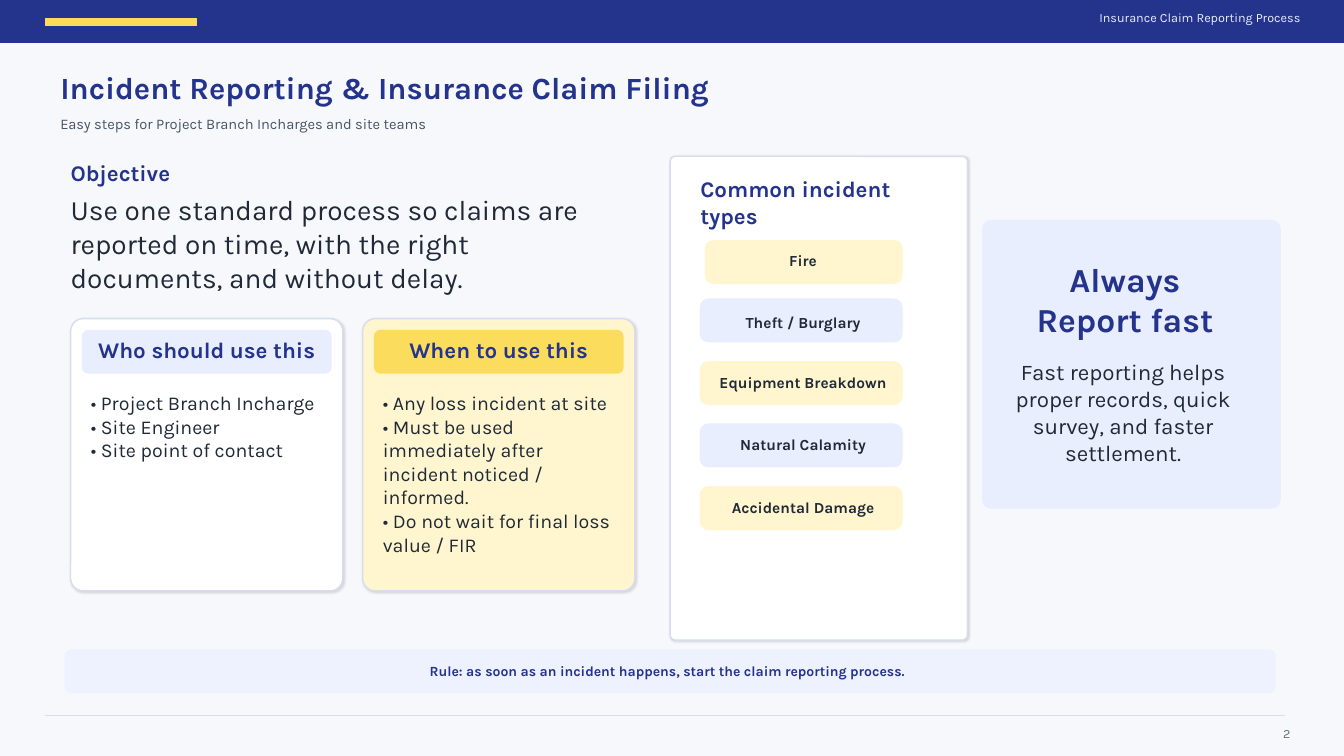
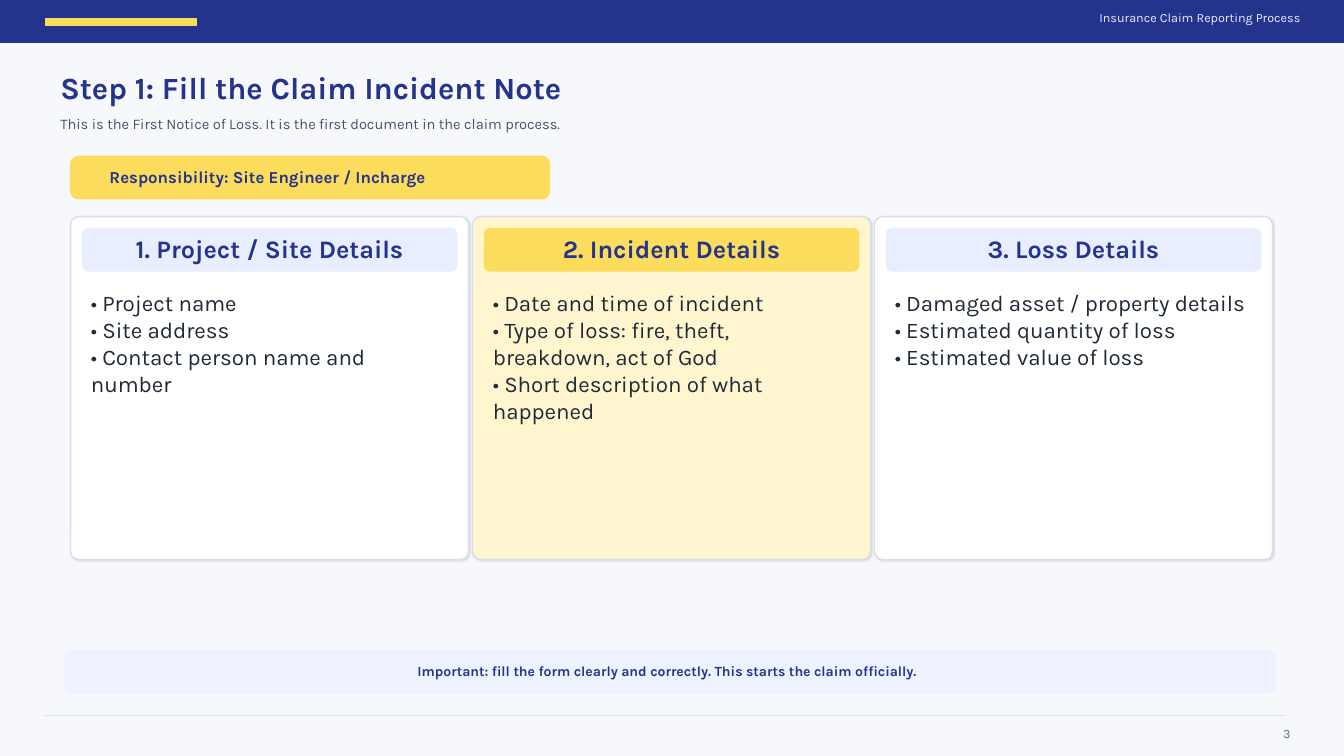
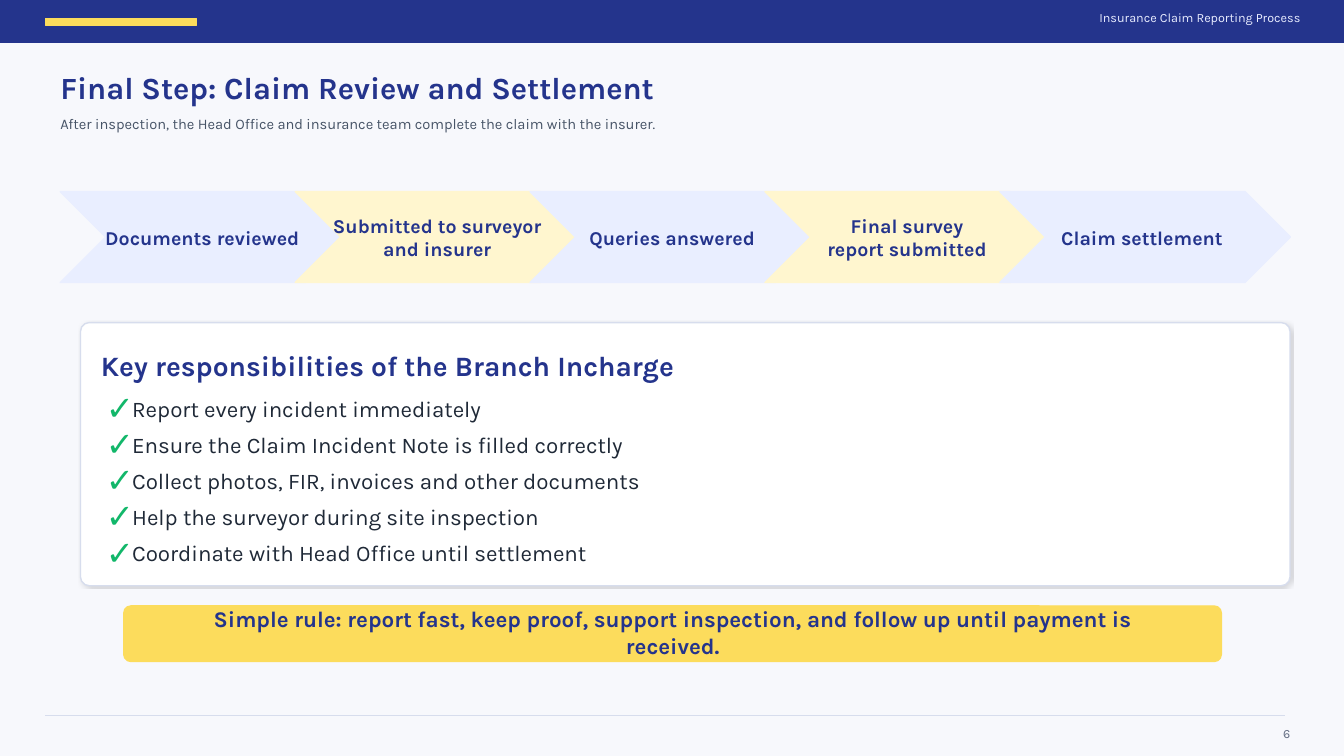
from lxml import etree
from pptx import Presentation
from pptx.dml.color import RGBColor
from pptx.enum.shapes import MSO_CONNECTOR, MSO_SHAPE
from pptx.enum.text import MSO_ANCHOR, PP_ALIGN
from pptx.oxml import parse_xml
from pptx.oxml.ns import nsdecls, qn
from pptx.util import Cm, Pt

FONT = "Karla"
NAVY, YELLOW, CREAM, LAVENDER = "24348C", "FCDC5C", "FFF6CF", "E9EEFF"
WHITE, PAPER, NOTE, BORDER = "FFFFFF", "F7F8FC", "EEF2FF", "D7DDED"
INK, SLATE, GREY, PALE, GREEN = "1F2937", "475467", "667085", "E8ECFF", "12B76A"
LEFT, CENTER, RIGHT = PP_ALIGN.LEFT, PP_ALIGN.CENTER, PP_ALIGN.RIGHT
CARD_SHADOW = (
    f'<a:outerShdw {nsdecls("a")} blurRad="19050" dist="6350" dir="2700000" '
    'algn="ctr" rotWithShape="0"><a:srgbClr val="000000">'
    '<a:alpha val="12000"/></a:srgbClr></a:outerShdw>'
)
rgb = RGBColor.from_string


def add_block(slide, left, top, width, height, fill,
              corner=0, raised=False, preset=MSO_SHAPE.RECTANGLE):
    """Add a filled shape; corner is a radius in cm, raised adds border and shadow."""
    if corner:
        preset = MSO_SHAPE.ROUNDED_RECTANGLE
    block = slide.shapes.add_shape(preset, Cm(left), Cm(top), Cm(width), Cm(height))
    if corner:
        block.adjustments[0] = corner / min(width, height)
    block.fill.solid()
    block.fill.fore_color.rgb = rgb(fill)
    block.line.color.rgb = rgb(BORDER if raised else fill)
    block.line.width = Pt(1)
    block.shadow.inherit = False
    if raised:
        effects = block.element.spPr.find(qn("a:effectLst"))
        effects.append(parse_xml(CARD_SHADOW))
    return block


def add_text(slide, left, top, width, height, lines, size, color,
             bold=False, align=LEFT, anchor=MSO_ANCHOR.MIDDLE):
    """Add a text box without insets, one paragraph per line."""
    box = slide.shapes.add_textbox(Cm(left), Cm(top), Cm(width), Cm(height))
    frame = box.text_frame
    frame.word_wrap = True
    frame.vertical_anchor = anchor
    frame.margin_left = frame.margin_right = frame.margin_top = frame.margin_bottom = 0
    frame.text = "\n".join(lines)
    for paragraph in frame.paragraphs:
        paragraph.alignment = align
        paragraph.font.name = FONT
        paragraph.font.size = Pt(size)
        paragraph.font.bold = bold
        paragraph.font.color.rgb = rgb(color)
    return box


prs = Presentation()
prs.slide_width, prs.slide_height = Cm(33.87), Cm(19.05)
blank = prs.slide_layouts[6]
background = prs.slide_master.background.fill
background.solid()
background.fore_color.rgb = rgb(PAPER)

# Titles, subtitles and page numbers
headings = [
    ("Incident Reporting & Insurance Claim Filing",
     "Easy steps for Project Branch Incharges and site teams", "2"),
    ("Step 1: Fill the Claim Incident Note",
     "This is the First Notice of Loss. It is the first document in the claim process.", "3"),
    ("Final Step: Claim Review and Settlement",
     "After inspection, the Head Office and insurance team complete the claim "
     "with the insurer.", "6"),
]
slides = []
for title, subtitle, page in headings:
    slide = prs.slides.add_slide(blank)
    add_text(slide, 1.52, 1.65, 22.35, 1.07, [title], 22, NAVY, bold=True)
    add_text(slide, 1.52, 2.74, 24.38, 0.76, [subtitle], 10.5, SLATE)
    add_text(slide, 31.88, 18.26, 0.64, 0.46, [page], 9, GREY, align=RIGHT)
    slides.append(slide)
overview, incident_note, settlement = slides

# Top band and footer rule: drawn once, then moved to the layout
band = add_block(overview, 0, 0, 33.87, 1.07, NAVY)
accent = add_block(overview, 1.14, 0.46, 3.81, 0.18, YELLOW)
deck_name = add_text(overview, 23.37, 0.2, 9.4, 0.46,
                     ["Insurance Claim Reporting Process"], 9, PALE, align=RIGHT)
footer_rule = overview.shapes.add_connector(
    MSO_CONNECTOR.STRAIGHT, Cm(1.14), Cm(18.03), Cm(32.39), Cm(18.03))
footer_rule.line.color.rgb = rgb(BORDER)
footer_rule.line.width = Pt(1)
etree.SubElement(footer_rule.element.spPr, qn("a:effectLst"))
for part in (band, accent, deck_name, footer_rule):
    blank.shapes.element.append(part.element)

# Cards with a heading bar: overview and incident note
card_rows = [
    # slide, top, width, height, step, heading size, body size, cards
    (overview, 8.03, 6.86, 6.86, 7.36, 16, 14, [
        ("Who should use this",
         ["Project Branch Incharge", "Site Engineer", "Site point of contact"]),
        ("When to use this",
         ["Any loss incident at site",
          "Must be used immediately after incident noticed / informed.",
          "Do not wait for final loss value / FIR"]),
    ]),
    (incident_note, 5.46, 10.03, 8.64, 10.13, 18, 16, [
        ("1. Project / Site Details",
         ["Project name", "Site address", "Contact person name and number"]),
        ("2. Incident Details",
         ["Date and time of incident",
          "Type of loss: fire, theft, breakdown, act of God",
          "Short description of what happened"]),
        ("3. Loss Details",
         ["Damaged asset / property details", "Estimated quantity of loss",
          "Estimated value of loss"]),
    ]),
]
for slide, top, width, height, step, heading_size, body_size, cards in card_rows:
    corner = 0.32 if slide is overview else 0.2
    for index, (heading, points) in enumerate(cards):
        left = 1.78 + index * step
        card_fill, bar_fill = [(WHITE, LAVENDER), (CREAM, YELLOW)][index % 2]
        add_block(slide, left, top, width, height, card_fill, corner, raised=True)
        add_block(slide, left + 0.3, top + 0.3, width - 0.6, 1.07, bar_fill, 0.15)
        add_text(slide, left + 0.56, top + 0.51, width - 1.12, 0.56, [heading],
                 heading_size, NAVY, bold=True, align=CENTER)
        add_text(slide, left + 0.51, top + 1.83, width - 1.02, height - 2.24,
                 [f"• {point}" for point in points], body_size, INK,
                 anchor=MSO_ANCHOR.TOP)

# Bottom notes
notes = [
    (overview, "Rule: as soon as an incident happens, start the claim reporting process."),
    (incident_note,
     "Important: fill the form clearly and correctly. This starts the claim officially."),
]
for slide, note in notes:
    add_block(slide, 1.65, 16.38, 30.48, 1.07, NOTE, 0.15)
    add_text(slide, 2.08, 16.69, 29.46, 0.41, [note], 10, NAVY, bold=True, align=CENTER)

# Overview: objective, incident types and call to action
add_text(overview, 1.78, 4.06, 2.79, 0.56, ["Objective"], 16, NAVY, bold=True)
add_text(overview, 1.78, 4.72, 13.72, 2.82,
         ["Use one standard process so claims are reported on time, "
          "with the right documents, and without delay."], 20, INK)

add_block(overview, 16.89, 3.94, 7.49, 12.19, WHITE, 0.13, raised=True)
add_text(overview, 17.65, 4.78, 6.35, 0.64, ["Common incident types"], 16, NAVY, bold=True)
incident_types = [
    # label, left, top, label top
    ("Fire", 17.78, 6.07, 6.25),
    ("Theft / Burglary", 17.65, 7.54, 7.82),
    ("Equipment Breakdown", 17.65, 9.12, 9.32),
    ("Natural Calamity", 17.65, 10.69, 10.9),
    ("Accidental Damage", 17.65, 12.27, 12.47),
]
for index, (incident, left, top, label_top) in enumerate(incident_types):
    add_block(overview, left, top, 22.73 - left, 1.07, [CREAM, LAVENDER][index % 2], 0.2)
    add_text(overview, 17.65, label_top, 5.18, 0.61, [incident], 11, INK,
             bold=True, align=CENTER)

add_block(overview, 24.77, 5.56, 7.49, 7.24, LAVENDER, 0.2)
add_text(overview, 25.43, 7.19, 5.84, 0.71, ["Always", "Report fast"], 24, NAVY,
         bold=True, align=CENTER)
add_text(overview, 25.32, 9.12, 5.97, 2.54,
         ["Fast reporting helps proper records, quick survey, and faster settlement."],
         16, INK, align=CENTER)

# Incident note: responsibility
add_block(incident_note, 1.78, 3.94, 12.07, 1.07, YELLOW, 0.2)
add_text(incident_note, 1.98, 4.14, 9.53, 0.61,
         ["Responsibility: Site Engineer / Incharge"], 12, NAVY, bold=True, align=CENTER)

# Settlement: stages, responsibilities and closing rule
stages = [
    ["Documents reviewed"],
    ["Submitted to surveyor", "and insurer"],
    ["Queries answered"],
    ["Final survey", "report submitted"],
    ["Claim settlement"],
]
for index, stage in enumerate(stages):
    left = 1.52 + index * 5.92
    add_block(settlement, left, 4.83, 7.32, 2.29, [LAVENDER, CREAM][index % 2],
              preset=MSO_SHAPE.CHEVRON)
    add_text(settlement, left + 0.33, 5.28, 6.5, 1.4, stage, 14, NAVY,
             bold=True, align=CENTER)

add_block(settlement, 2.03, 8.13, 30.48, 6.63, WHITE, 0.22, raised=True)
add_text(settlement, 2.54, 8.89, 17.45, 0.64,
         ["Key responsibilities of the Branch Incharge"], 20, NAVY, bold=True)
responsibilities = [
    "Report every incident immediately",
    "Ensure the Claim Incident Note is filled correctly",
    "Collect photos, FIR, invoices and other documents",
    "Help the surveyor during site inspection",
    "Coordinate with Head Office until settlement",
]
for index, responsibility in enumerate(responsibilities):
    top = 9.98 + index * 0.91
    add_text(settlement, 2.67, top, 0.46, 0.56, ["✓"], 24, GREEN, bold=True, align=CENTER)
    add_text(settlement, 3.33, top + 0.03, 26.77, 0.56, [responsibility], 16, INK)

add_block(settlement, 3.12, 15.27, 27.66, 1.4, YELLOW, 0.18)
add_text(settlement, 4.24, 15.54, 25.43, 0.76,
         ["Simple rule: report fast, keep proof, support inspection, "
          "and follow up until payment is received."], 16, NAVY, bold=True, align=CENTER)

prs.save("out.pptx")
